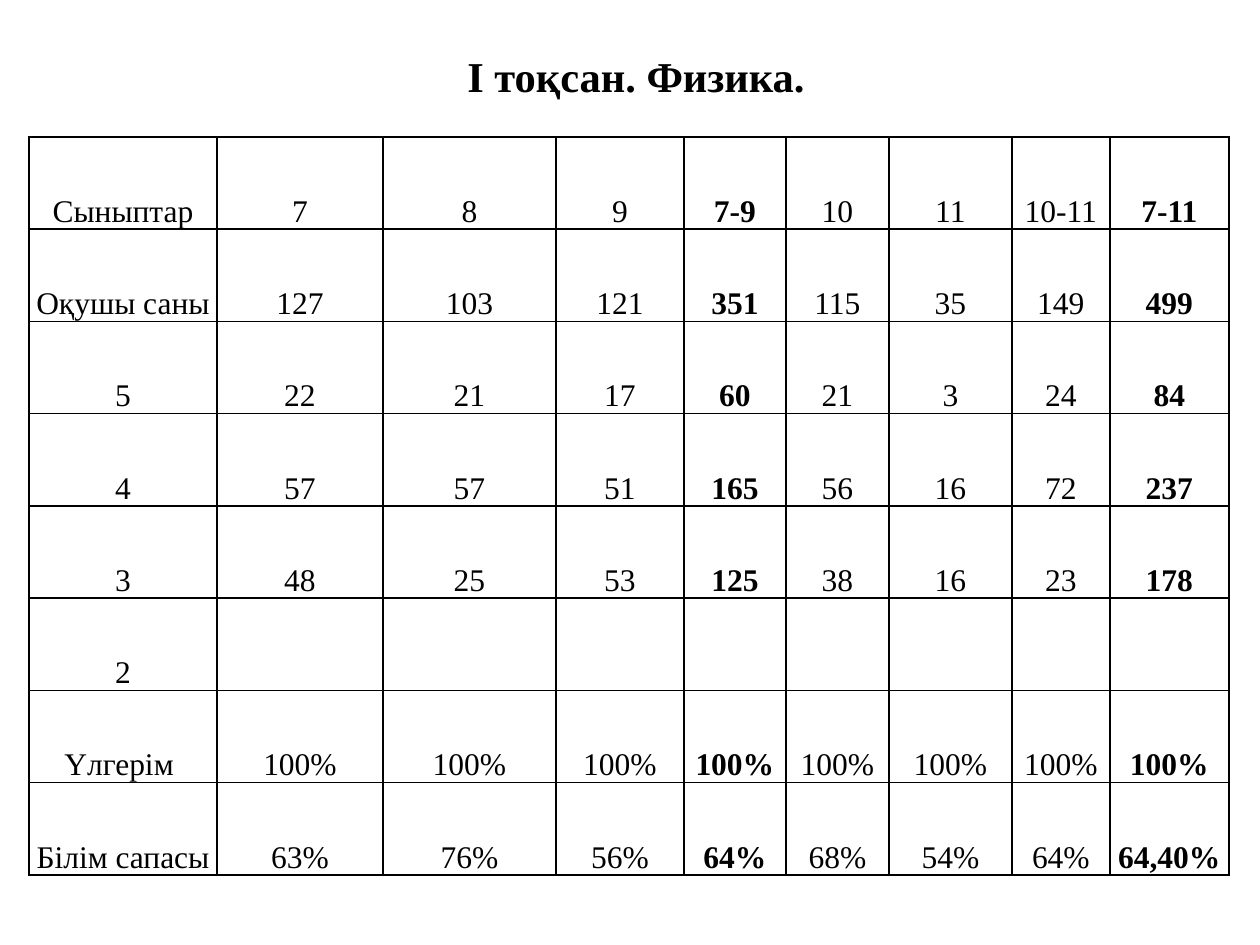
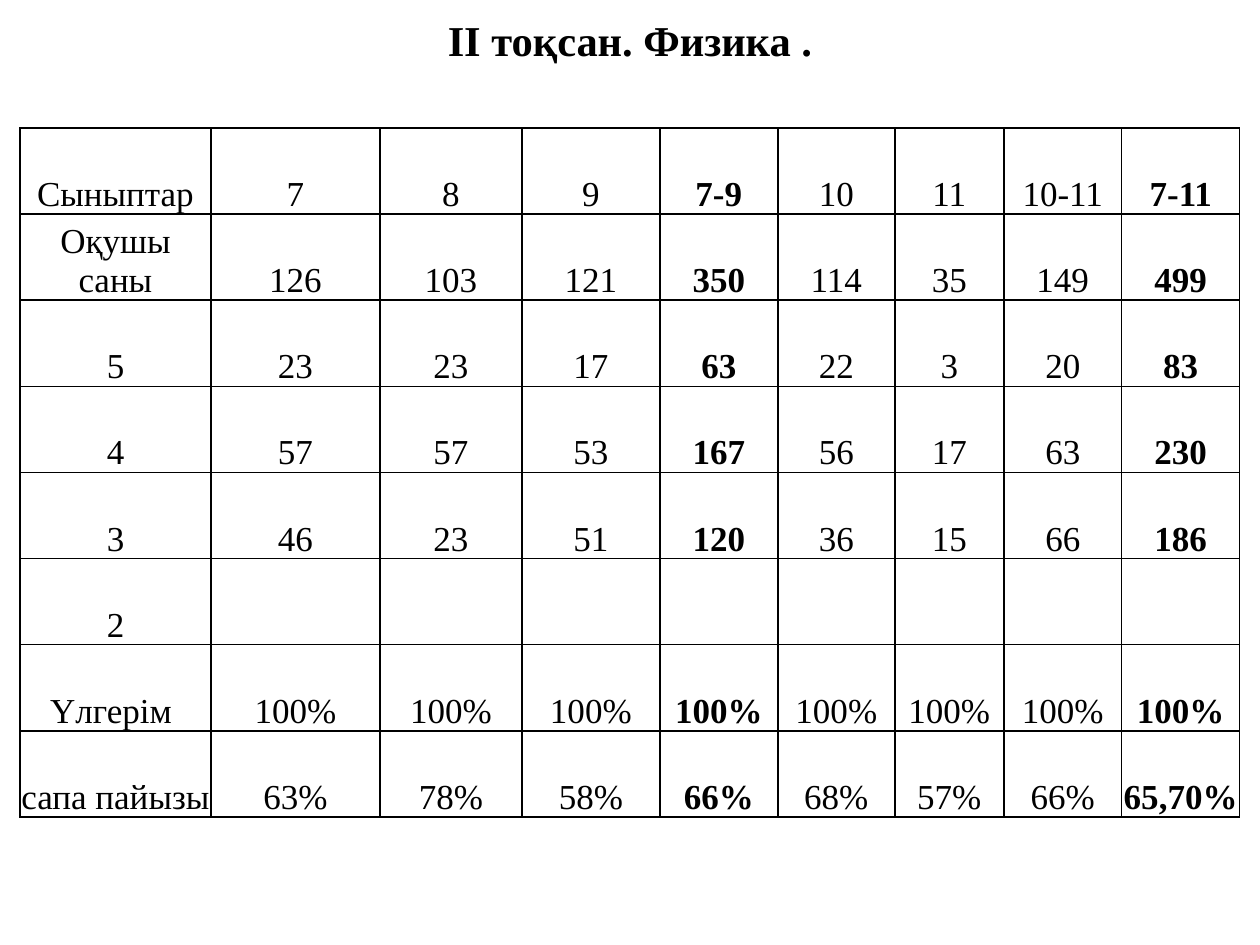
"""Builds two slides with the physics results of the first and second school terms."""
from dataclasses import dataclass

from lxml import etree
from pptx import Presentation
from pptx.dml.color import RGBColor
from pptx.enum.text import MSO_ANCHOR, MSO_AUTO_SIZE, PP_ALIGN
from pptx.oxml.ns import qn
from pptx.util import Pt

CENTER = PP_ALIGN.CENTER
BOTTOM = MSO_ANCHOR.BOTTOM
NO_AUTOFIT = MSO_AUTO_SIZE.NONE
PX = 914400 / 126
SLIDE_SIZE = (1260, 945)
TITLE_ONLY = 5
CELL_INSET = 1
BORDER_SIDES = ("a:lnL", "a:lnR", "a:lnT", "a:lnB")


@dataclass(frozen=True)
class Theme:
    """Colours and type sizes shared by the slides."""
    font: str = "Times New Roman"
    ink: str = "000000"
    paper: str = "FFFFFF"
    title_size: float = 24.3
    border_width: float = 1


THEME = Theme()

GRADES = ["Сыныптар", "7", "8", "9", "7-9", "10", "11", "10-11", "7-11"]
SUMMARY_GRADES = {"7-9", "7-11"}
PASS_RATE = ["Үлгерім "] + ["100%"] * 8
NO_FAILS = ["2"] + [""] * 8

TERMS = [
    {
        "title": "І тоқсан. Физика.",
        "title_box": (69, 78, 1134, 71),
        "title_drop": 48,
        "table_box": (29, 137, 1200, 738),
        "columns": (188, 166, 173, 128, 102, 103, 123, 98, 119),
        "text_size": 18,
        "results": [
            GRADES,
            ["Оқушы саны", "127", "103", "121", "351", "115", "35", "149", "499"],
            ["5", "22", "21", "17", "60", "21", "3", "24", "84"],
            ["4", "57", "57", "51", "165", "56", "16", "72", "237"],
            ["3", "48", "25", "53", "125", "38", "16", "23", "178"],
            NO_FAILS,
            PASS_RATE,
            ["Білім сапасы", "63%", "76%", "56%", "64%", "68%", "54%", "64%", "64,40%"],
        ],
    },
    {
        "title": "ІІ тоқсан. Физика .",
        "title_box": (63, 38, 1134, 81),
        "title_drop": 54,
        "table_box": (20, 128, 1220, 689),
        "columns": (191, 169, 142, 138, 118, 117, 109, 118, 118),
        "text_size": 20,
        "results": [
            GRADES,
            ["Оқушы саны", "126", "103", "121", "350", "114", "35", "149", "499"],
            ["5", "23", "23", "17", "63", "22", "3", "20", "83"],
            ["4", "57", "57", "53", "167", "56", "17", "63", "230"],
            ["3", "46", "23", "51", "120", "36", "15", "66", "186"],
            NO_FAILS,
            PASS_RATE,
            ["сапа пайызы", "63%", "78%", "58%", "66%", "68%", "57%", "66%", "65,70%"],
        ],
    },
]


def px(length):
    return round(length * PX)


def style(paragraph, size, bold):
    paragraph.alignment = CENTER
    paragraph.font.name = THEME.font
    paragraph.font.size = Pt(size)
    paragraph.font.bold = bold
    paragraph.font.color.rgb = RGBColor.from_string(THEME.ink)


def draw_borders(cell):
    properties = cell._tc.get_or_add_tcPr()
    for position, side in enumerate(BORDER_SIDES):
        line = etree.Element(qn(side), w=str(Pt(THEME.border_width)))
        fill = etree.SubElement(line, qn("a:solidFill"))
        etree.SubElement(fill, qn("a:srgbClr"), val=THEME.ink)
        properties.insert(position, line)


def fill_cell(cell, value, size, bold):
    cell.text = value
    cell.vertical_anchor = BOTTOM
    cell.margin_left = cell.margin_right = cell.margin_top = px(CELL_INSET)
    cell.margin_bottom = 0
    cell.fill.background()
    style(cell.text_frame.paragraphs[0], size, bold)
    draw_borders(cell)


def add_title(slide, term):
    title = slide.shapes.title
    title.left, title.top, title.width, title.height = map(px, term["title_box"])
    frame = title.text_frame
    frame.text = term["title"]
    frame.auto_size = NO_AUTOFIT
    frame.vertical_anchor = BOTTOM
    frame.margin_top = 0
    frame.margin_bottom = px(term["title_drop"])
    style(frame.paragraphs[0], THEME.title_size, True)


def add_results(slide, term):
    results = term["results"]
    table = slide.shapes.add_table(
        len(results), len(GRADES), *map(px, term["table_box"])).table
    table.first_row = table.horz_banding = False
    for column, width in zip(table.columns, term["columns"]):
        column.width = px(width)
    for row, values in zip(table.rows, results):
        row.height = px(term["table_box"][3] / len(results))
        for cell, grade, value in zip(row.cells, GRADES, values):
            fill_cell(cell, value, term["text_size"], grade in SUMMARY_GRADES)


def main():
    deck = Presentation()
    deck.slide_width, deck.slide_height = map(px, SLIDE_SIZE)
    background = deck.slide_master.background.fill
    background.solid()
    background.fore_color.rgb = RGBColor.from_string(THEME.paper)
    for term in TERMS:
        slide = deck.slides.add_slide(deck.slide_layouts[TITLE_ONLY])
        add_title(slide, term)
        add_results(slide, term)
    deck.save("out.pptx")


if __name__ == "__main__":
    main()
